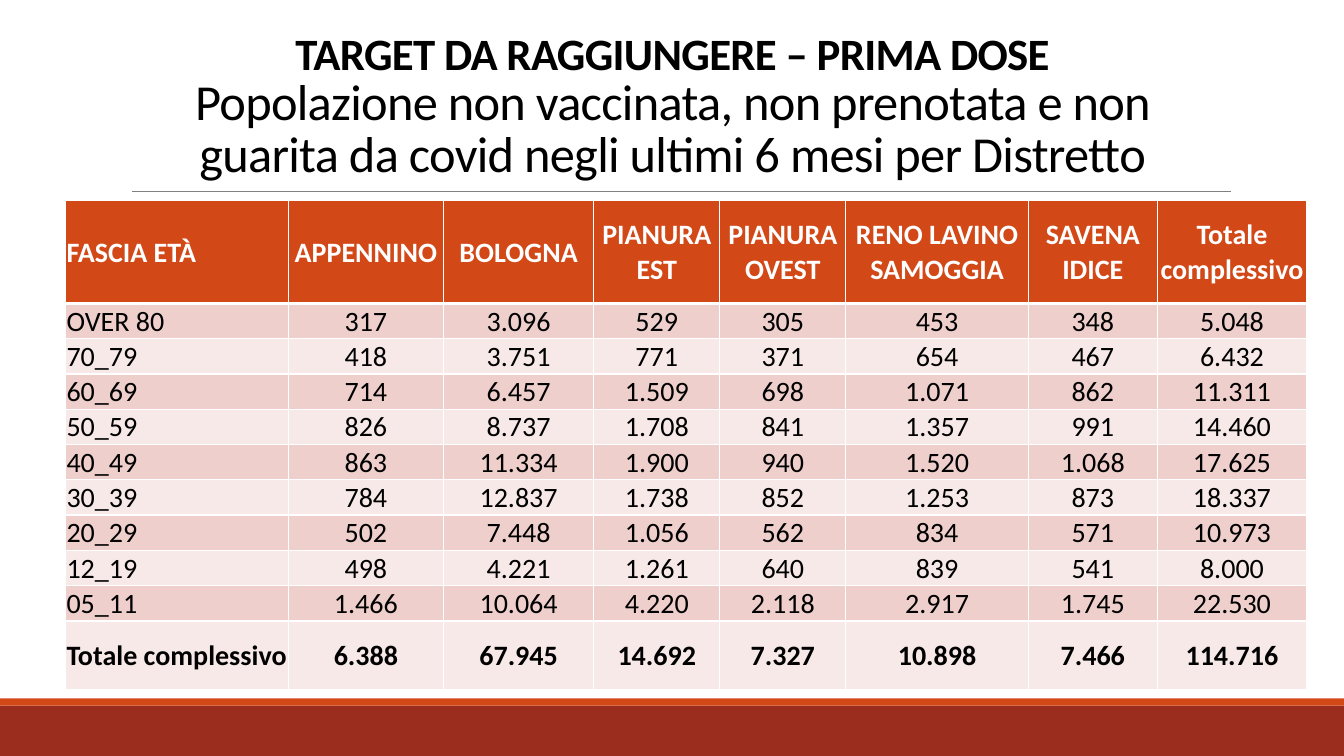
from lxml.etree import SubElement
from pptx import Presentation
from pptx.dml.color import RGBColor
from pptx.enum.shapes import MSO_CONNECTOR, MSO_SHAPE
from pptx.enum.text import MSO_ANCHOR as Anchor, PP_ALIGN as Align
from pptx.oxml.ns import qn
from pptx.util import Inches, Pt

COLORS = {
    "black": "000000",
    "white": "FFFFFF",
    "rule": "808080",
    "orange": "D34817",
    "brick": "9B2D1F",
    "pink": "EFCFCC",
    "pale": "F7E9E8",
}
FONT = "Calibri"
HEADERS = ["FASCIA ETÀ", "APPENNINO", "BOLOGNA", "PIANURA EST", "PIANURA OVEST",
           "RENO LAVINO SAMOGGIA", "SAVENA IDICE", "Totale complessivo"]
AGE_GROUPS = [
    ["OVER 80", "317", "3.096", "529", "305", "453", "348", "5.048"],
    ["70_79", "418", "3.751", "771", "371", "654", "467", "6.432"],
    ["60_69", "714", "6.457", "1.509", "698", "1.071", "862", "11.311"],
    ["50_59", "826", "8.737", "1.708", "841", "1.357", "991", "14.460"],
    ["40_49", "863", "11.334", "1.900", "940", "1.520", "1.068", "17.625"],
    ["30_39", "784", "12.837", "1.738", "852", "1.253", "873", "18.337"],
    ["20_29", "502", "7.448", "1.056", "562", "834", "571", "10.973"],
    ["12_19", "498", "4.221", "1.261", "640", "839", "541", "8.000"],
    ["05_11", "1.466", "10.064", "4.220", "2.118", "2.917", "1.745", "22.530"],
]
TOTALS = ["Totale complessivo", "6.388", "67.945", "14.692", "7.327", "10.898",
          "7.466", "114.716"]
ROWS = [HEADERS, *AGE_GROUPS, TOTALS]
COLUMN_WIDTHS = [2.21, 1.54, 1.49, 1.25, 1.25, 1.81, 1.28, 1.48]
ROW_HEIGHTS = [1.02] + [0.35] * len(AGE_GROUPS) + [0.68]


def color(name):
    return RGBColor.from_string(COLORS[name])


def style_span(span, size, bold, color_name):
    span.font.name = FONT
    span.font.size = Pt(size)
    span.font.bold = bold
    span.font.color.rgb = color(color_name)


deck = Presentation()
deck.slide_width, deck.slide_height = Inches(13.33), Inches(7.5)
page = deck.slides.add_slide(deck.slide_layouts[6])

# Footer bands and the rule under the title
for top, height, name in [(7, 0.5, "brick"), (6.93, 0.07, "orange")]:
    band = page.shapes.add_shape(MSO_SHAPE.RECTANGLE, 0, Inches(top),
                                 deck.slide_width, Inches(height))
    band.shadow.inherit = False
    band.fill.solid()
    band.fill.fore_color.rgb = color(name)
    band.line.fill.background()

rule = page.shapes.add_connector(MSO_CONNECTOR.STRAIGHT, Inches(1.31), Inches(1.9),
                                 Inches(12.21), Inches(1.9))
rule.line.color.rgb = color("rule")
rule.line.width = Pt(0.5)
SubElement(rule._element.spPr, qn("a:effectLst"))

# Title
box = page.shapes.add_textbox(Inches(1.17), Inches(0.27), Inches(11), Inches(1.59))
frame = box.text_frame
frame.word_wrap = True
frame.vertical_anchor = Anchor.BOTTOM
para = frame.paragraphs[0]
para.text = ("TARGET DA RAGGIUNGERE – PRIMA DOSE\v"
             "Popolazione non vaccinata, non prenotata e non guarita da covid "
             "negli ultimi 6 mesi per Distretto")
para.alignment = Align.CENTER
para.line_spacing = 0.85
for span, size, bold in zip(para.runs, (32, 36), (True, False)):
    style_span(span, size, bold, "black")
    span.font._element.set("spc", "-50")

# Table of people still to reach, by age group and district
table = page.shapes.add_table(len(ROWS), len(HEADERS), Inches(0.65), Inches(1.99),
                              Inches(12.3), Inches(4.82)).table
for column, width in zip(table.columns, COLUMN_WIDTHS):
    column.width = Inches(width)
for row, height in zip(table.rows, ROW_HEIGHTS):
    row.height = Inches(height)

for r, texts in enumerate(ROWS):
    is_header, is_total = r == 0, r == len(ROWS) - 1
    fill = "orange" if is_header else "pink" if r % 2 else "pale"
    borders = {"L": 1, "R": 1, "T": 3 if r == 1 else 1, "B": 3 if is_header else 1}
    for c, text in enumerate(texts):
        cell = table.cell(r, c)
        cell.margin_left = cell.margin_right = cell.margin_top = Inches(0.01)
        cell.margin_bottom = 0
        is_age_label = c == 0 and not (is_header or is_total)
        cell.vertical_anchor = Anchor.BOTTOM if is_age_label else Anchor.MIDDLE
        para = cell.text_frame.paragraphs[0]
        para.text = text
        para.alignment = Align.CENTER if c else Align.LEFT
        style_span(para.runs[0], 20, is_header or is_total,
                   "white" if is_header else "black")
        properties = cell._tc.get_or_add_tcPr()
        for side, points in borders.items():
            line = SubElement(properties, qn(f"a:ln{side}"), w=str(Pt(points)))
            SubElement(SubElement(line, qn("a:solidFill")), qn("a:srgbClr"),
                       val=COLORS["white"])
        cell.fill.solid()
        cell.fill.fore_color.rgb = color(fill)

deck.save("out.pptx")
